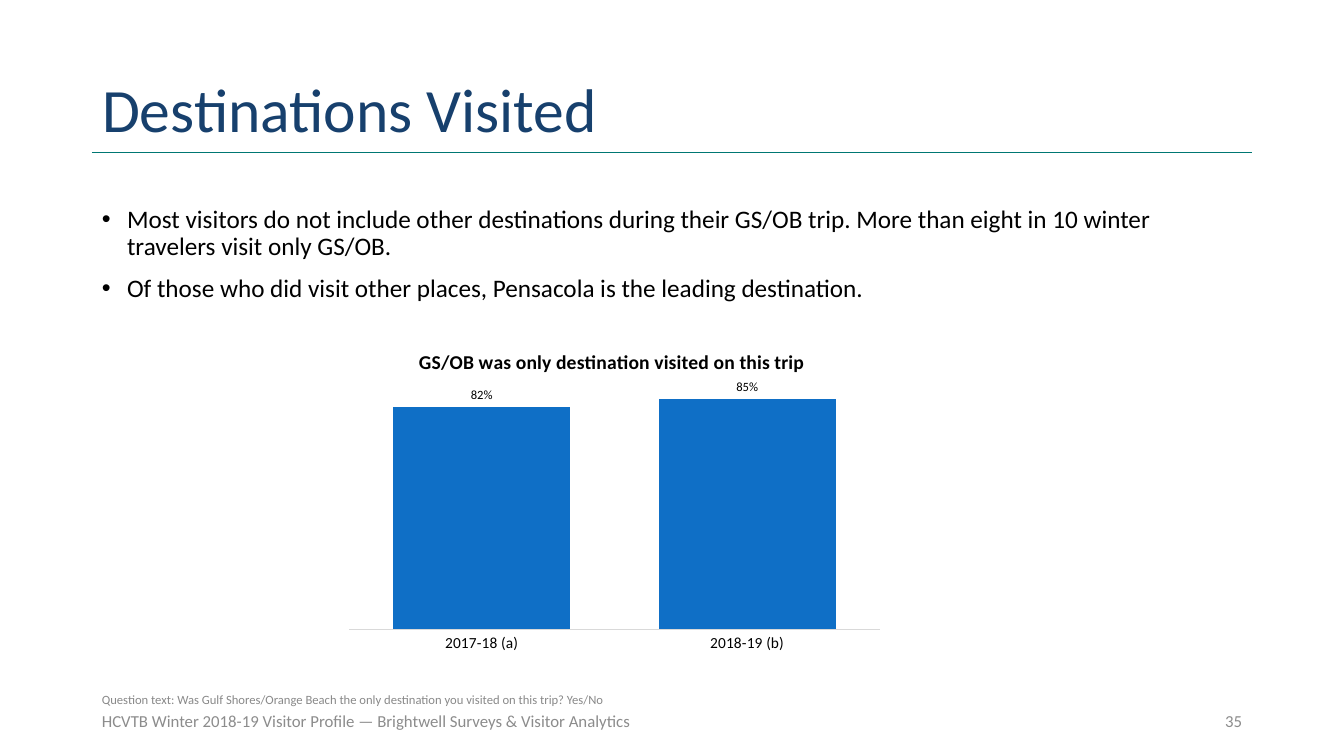
from dataclasses import dataclass

from lxml import etree
from pptx import Presentation
from pptx.chart.data import CategoryChartData
from pptx.dml.color import RGBColor as Rgb
from pptx.enum.chart import XL_CHART_TYPE as ChartType
from pptx.enum.chart import XL_LABEL_POSITION as LabelPos
from pptx.enum.chart import XL_TICK_LABEL_POSITION as TickLabelPos
from pptx.enum.chart import XL_TICK_MARK as TickMark
from pptx.enum.shapes import MSO_CONNECTOR as Connector
from pptx.enum.text import MSO_ANCHOR as Anchor
from pptx.enum.text import PP_ALIGN as Align
from pptx.oxml import parse_xml
from pptx.oxml.ns import nsdecls, qn
from pptx.util import Pt

EMU_PER_PX = 914400 / 100.8


@dataclass(frozen=True)
class Theme:
    font: str = "Calibri"
    heading: str = "17406D"
    ink: str = "000000"
    muted: str = "8C8C8C"
    note: str = "898989"
    rule: str = "007773"
    bar: str = "0F6FC6"
    axis: str = "D9D9D9"
    heading_size: int = 44
    body_size: int = 18
    chart_title_size: int = 14
    footer_size: int = 12
    category_size: int = 11
    chart_size: int = 10
    small_size: int = 9


THEME = Theme()


def px(length):
    return round(length * EMU_PER_PX)


def apply(target, values):
    for name, value in values.items():
        setattr(target, name, value)


def style_font(font, size, color, bold=False):
    apply(font, {"name": THEME.font, "size": Pt(size), "bold": bold})
    font.color.rgb = Rgb.from_string(color)


def write(frame, lines, size, color, anchor=Anchor.TOP, **paragraph_format):
    apply(frame, {"word_wrap": True, "vertical_anchor": anchor})
    for index, line in enumerate(lines):
        paragraph = frame.add_paragraph() if index else frame.paragraphs[0]
        apply(paragraph, {"alignment": Align.LEFT, **paragraph_format})
        run = paragraph.add_run()
        run.text = line
        style_font(run.font, size, color)


def add_text(slide, box, lines, size, color, **text_format):
    frame = slide.shapes.add_textbox(*map(px, box)).text_frame
    write(frame, lines, size, color, **text_format)
    return frame


def add_heading(slide, box, heading):
    left, top, width, height = box
    title = slide.shapes.title
    apply(title, dict(zip(("left", "top", "width", "height"), map(px, box))))
    write(title.text_frame, [heading], THEME.heading_size, THEME.heading,
          anchor=Anchor.MIDDLE, line_spacing=0.9)
    rule_y = top + 112
    rule = slide.shapes.add_connector(
        Connector.STRAIGHT, *map(px, (left, rule_y, left + width, rule_y)))
    rule.line.color.rgb = Rgb.from_string(THEME.rule)
    rule.line.width = Pt(0.5)
    etree.SubElement(rule._element.spPr, qn("a:effectLst"))


def add_bullets(slide, box, points):
    frame = add_text(slide, box, points, THEME.body_size, THEME.ink,
                     line_spacing=0.9, space_before=Pt(10))
    for paragraph in frame.paragraphs:
        properties = paragraph._p.get_or_add_pPr()
        properties.set("marL", "228600")
        properties.set("indent", "-228600")
        for tag, key, value in (("a:buFont", "typeface", "Arial"),
                                ("a:buChar", "char", "•")):
            etree.SubElement(properties, qn(tag)).set(key, value)


def manual_layout(target=None, **fractions):
    layout = parse_xml(f"<c:layout {nsdecls('c')}><c:manualLayout/></c:layout>")
    settings = {"layoutTarget": target} if target else {}
    settings.update({"xMode": "edge", "yMode": "edge"}, **fractions)
    for name, value in settings.items():
        etree.SubElement(layout[0], qn(f"c:{name}")).set("val", str(value))
    return layout


def place(parent, layout, after=None):
    for old in parent.findall(qn("c:layout")):
        parent.remove(old)
    if after is None:
        parent.insert(0, layout)
    else:
        after.addnext(layout)


def add_share_chart(slide, box, heading, shares):
    share_data = CategoryChartData(number_format="0%")
    share_data.categories = list(shares)
    share_data.add_series("Series 1", list(shares.values()))
    chart = slide.shapes.add_chart(
        ChartType.COLUMN_CLUSTERED, *map(px, box), share_data).chart
    chart.has_legend = False
    style_font(chart.font, THEME.chart_size, THEME.ink)

    chart.has_title = True
    caption = chart.chart_title.text_frame
    caption.text = heading
    style_font(caption.paragraphs[0].runs[0].font,
               THEME.chart_title_size, THEME.ink, bold=True)
    chart.chart_title.include_in_layout = True
    title_element = chart.chart_title._element
    place(title_element, manual_layout(x=0.14, y=0.04),
          after=title_element.find(qn("c:tx")))
    place(chart._chartSpace.chart.plotArea,
          manual_layout("inner", x=0.02, y=0.08, w=0.96, h=0.83))

    apply(chart.value_axis, {
        "minimum_scale": 0, "maximum_scale": 1,
        "has_major_gridlines": False, "visible": False})
    years = chart.category_axis
    apply(years, {"major_tick_mark": TickMark.NONE,
                  "minor_tick_mark": TickMark.NONE,
                  "tick_label_position": TickLabelPos.NEXT_TO_AXIS})
    style_font(years.tick_labels.font, THEME.category_size, THEME.ink)
    years.format.line.color.rgb = Rgb.from_string(THEME.axis)
    years.format.line.width = Pt(0.75)

    plot = chart.plots[0]
    apply(plot, {"gap_width": 50, "vary_by_categories": False,
                 "has_data_labels": True})
    bar_fill = plot.series[0].format.fill
    bar_fill.solid()
    bar_fill.fore_color.rgb = Rgb.from_string(THEME.bar)
    apply(plot.data_labels, {
        "show_value": True, "position": LabelPos.OUTSIDE_END,
        "number_format": "0%", "number_format_is_linked": False})
    style_font(plot.data_labels.font, THEME.small_size, THEME.ink)


def add_footer(slide, box, question, report, page):
    left, top, width, height = box
    add_text(slide, (left, top, width, 25), [question],
             THEME.small_size, THEME.note)
    line_top, line_height, page_width = top + 14, height - 14, 163
    footer = {"size": THEME.footer_size, "color": THEME.muted,
              "anchor": Anchor.MIDDLE}
    add_text(slide, (left, line_top, width - page_width - 12, line_height),
             [report], **footer)
    add_text(slide, (left + width - page_width, line_top, page_width,
                     line_height), [page], alignment=Align.RIGHT, **footer)


def main():
    deck = Presentation()
    apply(deck, {"slide_width": px(1344), "slide_height": px(756)})
    slide = deck.slides.add_slide(deck.slide_layouts[5])
    margin, content_width = 92, 1160
    add_heading(slide, (margin, 40, content_width, 146), "Destinations Visited")
    add_bullets(slide, (margin, 202, content_width, 240), [
        "Most visitors do not include other destinations during their GS/OB "
        "trip. More than eight in 10 winter travelers visit only GS/OB.",
        "Of those who did visit other places, Pensacola is the leading "
        "destination."])
    add_footer(slide, (margin, 687, content_width, 54),
               "Question text: Was Gulf Shores/Orange Beach the only "
               "destination you visited on this trip? Yes/No",
               "HCVTB Winter 2018-19 Visitor Profile — Brightwell Surveys "
               "& Visitor Analytics", "35")
    add_share_chart(slide, (338, 332, 553, 327),
                    "GS/OB was only destination visited on this trip",
                    {"2017-18 (a)": 0.82, "2018-19 (b)": 0.85})
    deck.save("out.pptx")


if __name__ == "__main__":
    main()
